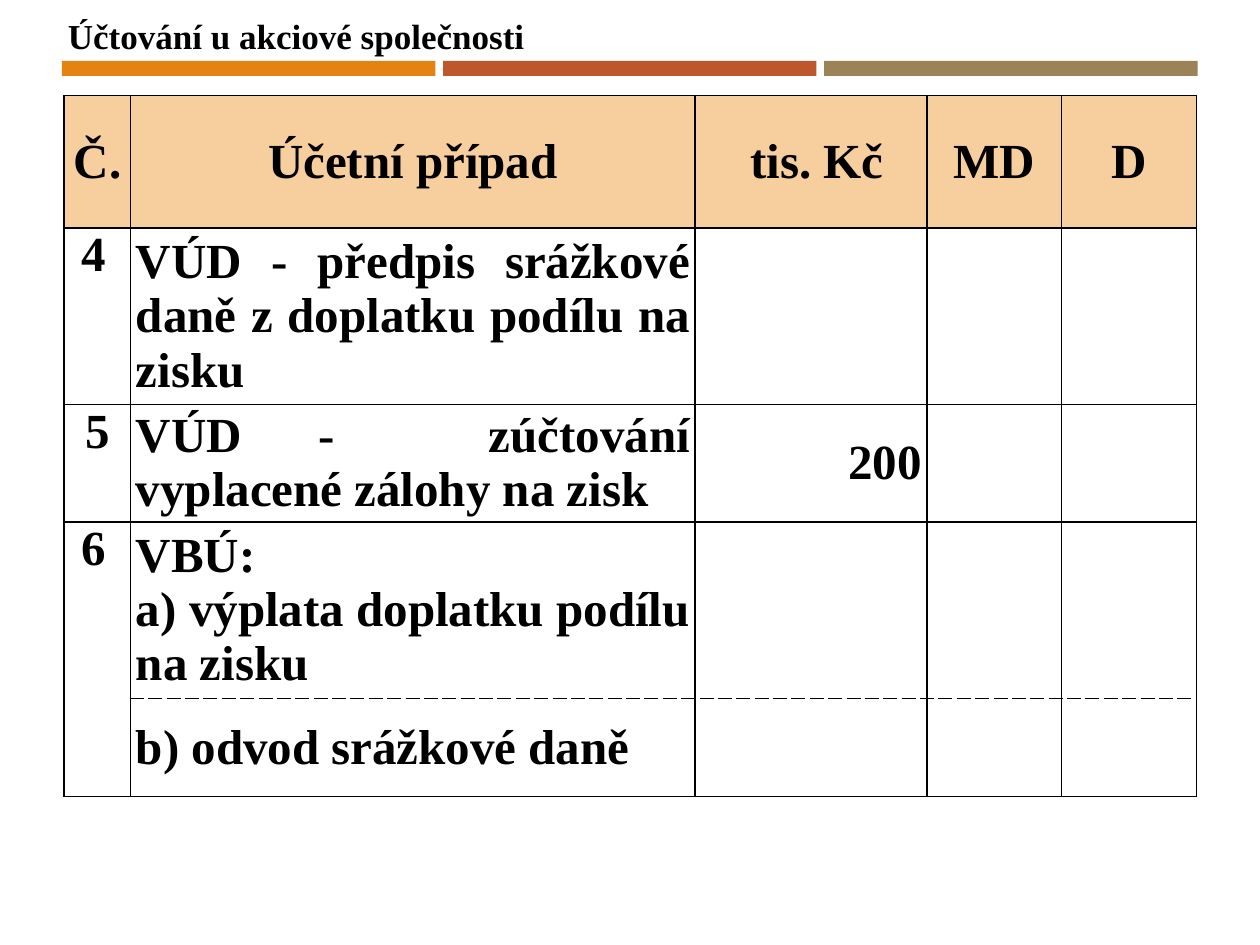
from lxml import etree
from pptx import Presentation
from pptx.dml.color import RGBColor
from pptx.enum.shapes import MSO_SHAPE
from pptx.enum.text import MSO_ANCHOR, MSO_AUTO_SIZE, PP_ALIGN
from pptx.oxml.ns import qn
from pptx.util import Pt

RECT = MSO_SHAPE.RECTANGLE
TOP, MIDDLE = MSO_ANCHOR.TOP, MSO_ANCHOR.MIDDLE
LEFT, CENTER = PP_ALIGN.LEFT, PP_ALIGN.CENTER
RIGHT, JUSTIFY = PP_ALIGN.RIGHT, PP_ALIGN.JUSTIFY
BLACK = RGBColor(0x00, 0x00, 0x00)
PEACH = RGBColor(0xF7, 0xCE, 0x9D)
BARS = [
    RGBColor(0xE4, 0x83, 0x12),
    RGBColor(0xBD, 0x58, 0x2C),
    RGBColor(0x9B, 0x83, 0x57),
]
FONT = "Times New Roman"
WIDTHS = [38, 322.5, 132.5, 77, 77]
HEIGHTS = [75.6, 100.8, 67.2, 100.8, 56.2]
ROWS = [
    ["Č.", "Účetní případ", " tis. Kč", "MD", "D"],
    [" 4", "VÚD - předpis srážkové daně z doplatku podílu na zisku ", "", "", ""],
    ["5", "VÚD -  zúčtování vyplacené zálohy na zisk", "200", "", ""],
    [" 6", "VBÚ:\na) výplata doplatku podílu na zisku", "", "", ""],
    ["", "b) odvod srážkové daně", "", "", ""],
]
SPLIT = 3


def style(frame, size, align):
    for para in frame.paragraphs:
        para.alignment = align
        for run in para.runs:
            run.font.name = FONT
            run.font.size = Pt(size)
            run.font.bold = True
            run.font.color.rgb = BLACK


def add_bars(slide):
    for i, color in enumerate(BARS):
        bar = slide.shapes.add_shape(
            RECT, Pt(35.4 + 217.8 * i), Pt(34.8), Pt(213.4), Pt(8.6))
        bar.shadow.inherit = False
        bar.fill.solid()
        bar.fill.fore_color.rgb = color
        bar.line.fill.background()


def add_title(slide):
    box = slide.shapes.add_textbox(Pt(31.7), Pt(5), Pt(277), Pt(31.5))
    frame = box.text_frame
    frame.word_wrap = False
    frame.auto_size = MSO_AUTO_SIZE.SHAPE_TO_FIT_TEXT
    frame.text = "Účtování u akciové společnosti"
    style(frame, 20, LEFT)


def add_edge(cell, side, dash):
    props = cell._tc.get_or_add_tcPr()
    line = etree.SubElement(props, qn(f"a:ln{side}"), w=str(Pt(1)))
    fill = etree.SubElement(line, qn("a:solidFill"))
    etree.SubElement(fill, qn("a:srgbClr"), val=str(BLACK))
    etree.SubElement(line, qn("a:prstDash"), val=dash)


def get_align(row, col, text):
    if row == 0 or text == "5":
        return CENTER
    return [LEFT, JUSTIFY, RIGHT, CENTER, CENTER][col]


def fill_cell(cell, row, col, text):
    cell.margin_left = cell.margin_right = Pt(3)
    cell.margin_top = cell.margin_bottom = 0
    cell.vertical_anchor = TOP if row and col == 0 else MIDDLE
    if text:
        cell.text_frame.text = text
        style(cell.text_frame, 28, get_align(row, col, text))
    for side in "LRTB":
        inner = (row, side) in [(SPLIT, "B"), (SPLIT + 1, "T")]
        add_edge(cell, side, "dash" if inner and col else "solid")
    if row == 0:
        cell.fill.solid()
        cell.fill.fore_color.rgb = PEACH
    else:
        cell.fill.background()


def add_grid(slide):
    grid = slide.shapes.add_table(
        len(ROWS), len(WIDTHS), Pt(36.7), Pt(54.7),
        Pt(sum(WIDTHS)), Pt(sum(HEIGHTS))).table
    grid.first_row = grid.horz_banding = False
    for col, width in zip(grid.columns, WIDTHS):
        col.width = Pt(width)
    for row, height in zip(grid.rows, HEIGHTS):
        row.height = Pt(height)
    for r, texts in enumerate(ROWS):
        for c, text in enumerate(texts):
            fill_cell(grid.cell(r, c), r, c, text)
    grid.cell(SPLIT, 0).merge(grid.cell(SPLIT + 1, 0))


def main():
    deck = Presentation()
    deck.slide_width, deck.slide_height = Pt(720), Pt(540)
    slide = deck.slides.add_slide(deck.slide_layouts[6])
    add_bars(slide)
    add_grid(slide)
    add_title(slide)
    deck.save("out.pptx")


if __name__ == "__main__":
    main()
